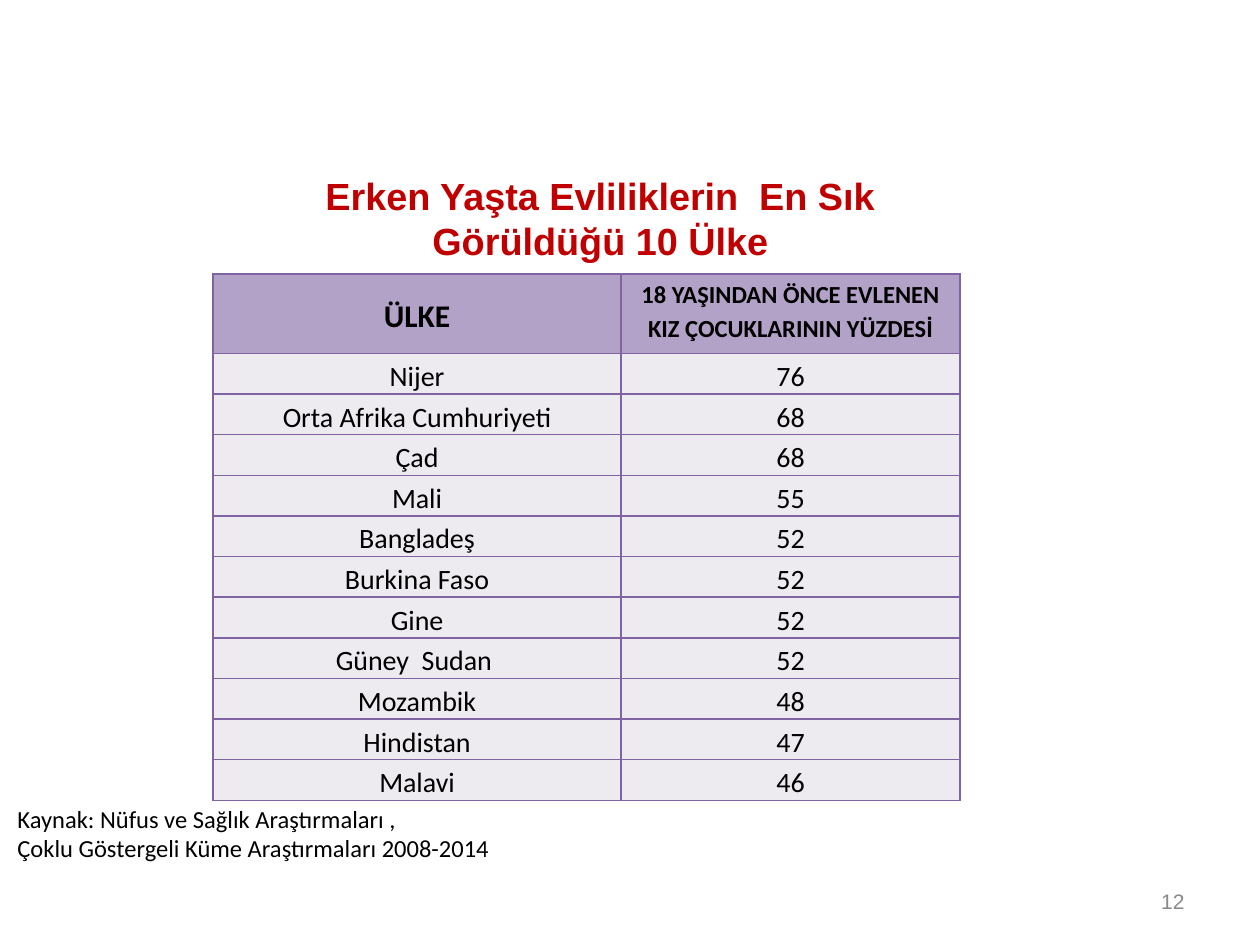
from dataclasses import dataclass
from lxml.etree import SubElement
from pptx import Presentation
from pptx.dml.color import RGBColor as Color
from pptx.enum.text import MSO_ANCHOR as Anchor, PP_ALIGN as Align
from pptx.oxml.ns import qn
from pptx.util import Inches, Pt


@dataclass(frozen=True)
class Theme:
    red: str = "C00000"
    black: str = "000000"
    gray: str = "898989"
    header: str = "B3A2C7"
    body: str = "EDEAF0"
    border: str = "8064A2"
    heading_font: str = "Arial"
    body_font: str = "Calibri"
    title_size: float = 21.6
    country_header_size: int = 18
    small_size: int = 14
    body_size: int = 16
    number_size: int = 12


theme = Theme()
presentation = Presentation()
presentation.slide_width = Inches(10)
presentation.slide_height = Inches(7.5)
width, height = presentation.slide_width, presentation.slide_height
slide = presentation.slides.add_slide(presentation.slide_layouts[6])


def add_run(paragraph, text, size, font, color, bold=False):
    run = paragraph.add_run()
    run.text = text
    run.font.size = Pt(size)
    run.font.name = font
    run.font.bold = bold
    run.font.color.rgb = Color.from_string(color)


def add_text_frame(left, top, across, down, anchor, inset_top=0.05):
    shape = slide.shapes.add_textbox(
        int(width * left), int(height * top), int(width * across), int(height * down))
    frame = shape.text_frame
    frame.word_wrap = True
    frame.vertical_anchor = anchor
    frame.margin_top = Inches(inset_top)
    return frame


title = add_text_frame(0.201, 0.153, 0.551, 0.116, Anchor.TOP, 0.22)
paragraph = title.paragraphs[0]
paragraph.alignment = Align.CENTER
add_run(paragraph, "Erken Yaşta Evliliklerin  En Sık Görüldüğü 10 Ülke",
        theme.title_size, theme.heading_font, theme.red, True)

number = add_text_frame(0.717, 0.927, 0.233, 0.053, Anchor.MIDDLE)
paragraph = number.paragraphs[0]
paragraph.alignment = Align.RIGHT
add_run(paragraph, "12", theme.number_size, theme.heading_font, theme.gray)

rows = [
    ("ÜLKE", "18 YAŞINDAN ÖNCE EVLENEN KIZ ÇOCUKLARININ YÜZDESİ"),
    ("Nijer", "76"),
    ("Orta Afrika Cumhuriyeti", "68"),
    ("Çad", "68"),
    ("Mali", "55"),
    ("Bangladeş", "52"),
    ("Burkina Faso", "52"),
    ("Gine", "52"),
    ("Güney  Sudan ", "52"),
    ("Mozambik", "48"),
    ("Hindistan", "47"),
    ("Malavi", "46"),
]
column_shares = (0.324, 0.269)
header_share, row_share = 0.084, 0.043
table = slide.shapes.add_table(
    len(rows), len(column_shares), int(width * 0.169), int(height * 0.29),
    int(width * sum(column_shares)),
    int(height * (header_share + row_share * (len(rows) - 1)))).table
for column, share in zip(table.columns, column_shares):
    column.width = int(width * share)

for row_index, texts in enumerate(rows):
    is_header = row_index == 0
    table.rows[row_index].height = int(height * (header_share if is_header else row_share))
    header_sizes = (theme.country_header_size, theme.small_size)
    for column_index, text in enumerate(texts):
        cell = table.cell(row_index, column_index)
        cell.margin_left = cell.margin_right = Inches(0.07)
        cell.margin_top, cell.margin_bottom = Inches(0.01), 0
        is_middle = is_header == (column_index == 0)
        cell.vertical_anchor = Anchor.MIDDLE if is_middle else Anchor.TOP
        properties = cell._tc.get_or_add_tcPr()
        for side in ("a:lnL", "a:lnR", "a:lnT", "a:lnB"):
            line = SubElement(properties, qn(side), w=str(Pt(1)))
            SubElement(SubElement(line, qn("a:solidFill")), qn("a:srgbClr"), val=theme.border)
        cell.fill.solid()
        cell.fill.fore_color.rgb = Color.from_string(theme.header if is_header else theme.body)
        paragraph = cell.text_frame.paragraphs[0]
        paragraph.alignment = Align.CENTER
        paragraph.line_spacing = 1.15
        paragraph.space_after = Pt(10)
        size = header_sizes[column_index] if is_header else theme.body_size
        add_run(paragraph, text, size, theme.body_font, theme.black, is_header)

source = add_text_frame(0.004, 0.812, 0.67, 0.108, Anchor.TOP, 0.29)
source_lines = ("Kaynak: Nüfus ve Sağlık Araştırmaları ,",
                "Çoklu Göstergeli Küme Araştırmaları 2008-2014")
for index, text in enumerate(source_lines):
    paragraph = source.add_paragraph() if index else source.paragraphs[0]
    add_run(paragraph, text, theme.small_size, theme.body_font, theme.black)

presentation.save("out.pptx")
